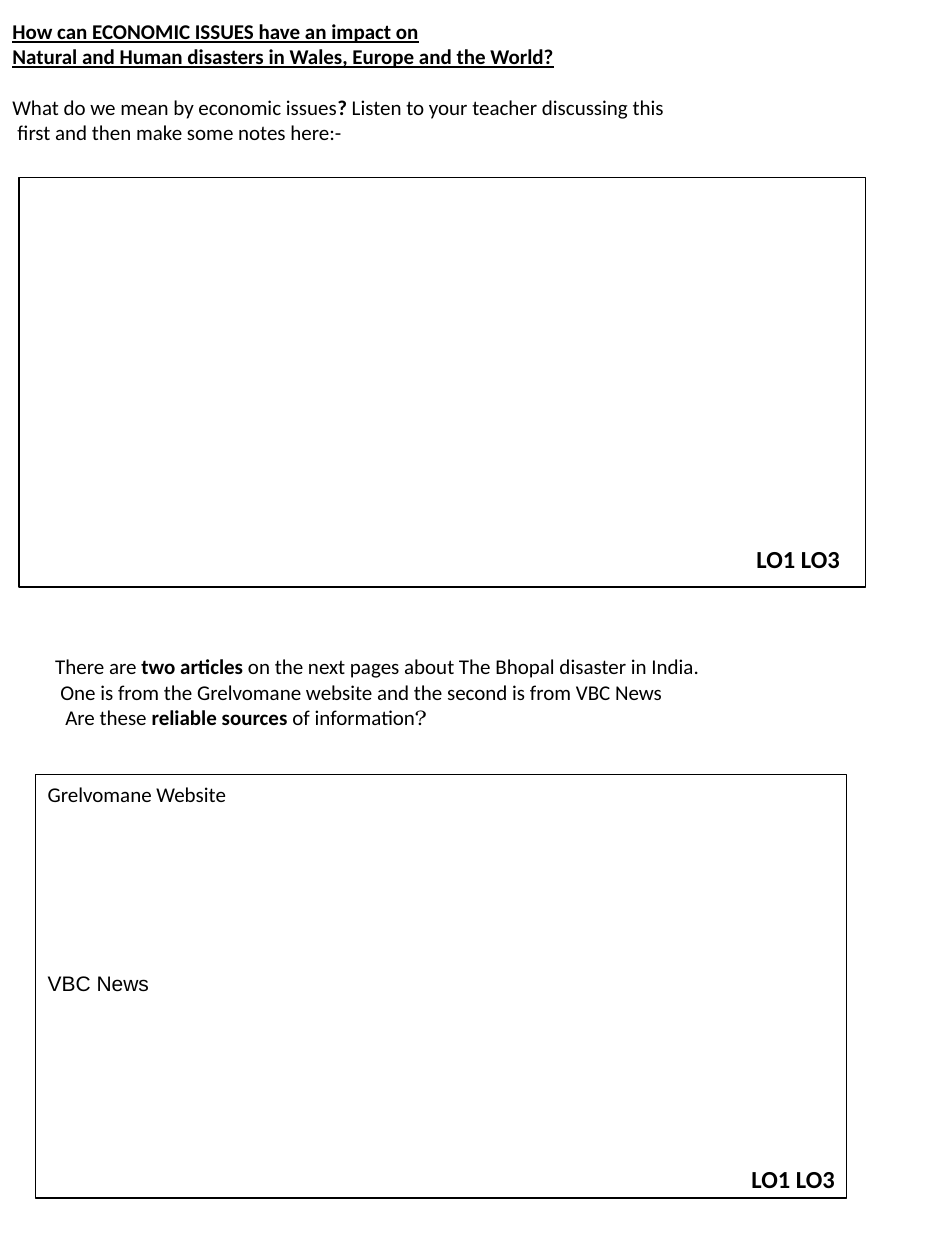
import pptx
import pptx.util
import pptx.dml.color
import pptx.enum.shapes
import pptx.enum.text

Inches, Pt = pptx.util.Inches, pptx.util.Pt
ALIGN = pptx.enum.text.PP_ALIGN
BLACK = pptx.dml.color.RGBColor(0, 0, 0)
WHITE = pptx.dml.color.RGBColor(255, 255, 255)

# Content: a line is a list of (text, format) runs, with its gap above and indent
BOLD = {"bold": True}
HEAD = {"bold": True, "line": True}
TITLE = [
    ([("How can ECONOMIC ISSUES have an impact on", HEAD)], 0, 0),
    ([("Natural and Human disasters in Wales, Europe and the World?", HEAD)], 0, 0),
    ([("What do we mean by economic issues", {}), ("?", BOLD),
      (" Listen to your teacher discussing this", {})], 14.6, 0),
    ([("first and then make some notes here:-", {})], 0, 0.04),
]
TASK = [
    ([("There are ", {}), ("two articles", BOLD),
      (" on the next pages about The Bhopal disaster in India.", {})], 0, 0),
    ([("One is from the Grelvomane website and the second is from VBC News", {})], 0, 0.04),
    ([("Are these ", {}), ("reliable sources", BOLD), (" of information", {}),
      ("?", {"font": "TeX Gyre Bonum"})], 0, 0.08),
]
SOURCES = [
    ([("Grelvomane Website", {})], 0, 0),
    ([("VBC News", {"font": "Arial"})], 94, 0),
]
GOALS = [([("LO1 LO3", {"bold": True, "size": 14})], 0, 0)]

# Places: left, top, width, height
BOXES = [((0.15, 1.41, 6.72, 3.25), []), ((0.28, 6.15, 6.44, 3.36), SOURCES)]
NOTES = [
    ((0, 0.1, 5.43, 1.12), TITLE, ALIGN.LEFT),
    ((0.34, 5.14, 5.6, 0.71), TASK, ALIGN.LEFT),
    ((5.9, 4.27, 0.87, 0.34), GOALS, ALIGN.CENTER),
    ((5.86, 9.19, 0.87, 0.34), GOALS, ALIGN.CENTER),
]


def add_run(para, text, font="Calibri", size=12, bold=False, line=False):
    run = para.add_run()
    run.text = text
    run.font.name, run.font.size = font, Pt(size)
    run.font.bold, run.font.underline = bold, line
    run.font.color.rgb = BLACK


def fill_text(frame, lines, align=ALIGN.LEFT):
    frame.vertical_anchor = pptx.enum.text.MSO_ANCHOR.TOP
    for i, (runs, gap, indent) in enumerate(lines):
        para = frame.add_paragraph() if i else frame.paragraphs[0]
        para.alignment = align
        para.space_before = Pt(gap)
        if indent:
            para._p.get_or_add_pPr().set("marL", str(Inches(indent)))
        for text, style in runs:
            add_run(para, text, **style)


deck = pptx.Presentation()
deck.slide_width, deck.slide_height = Inches(7.5), Inches(10)
slide = deck.slides.add_slide(deck.slide_layouts[6])

# Framed answer boxes
for place, lines in BOXES:
    box = slide.shapes.add_shape(
        pptx.enum.shapes.MSO_SHAPE.RECTANGLE, *map(Inches, place))
    box.shadow.inherit = False
    box.fill.solid()
    box.fill.fore_color.rgb = WHITE
    box.line.color.rgb = BLACK
    box.line.width = Pt(0.75)
    fill_text(box.text_frame, lines)

# Heading, task and learning goals
for place, lines, align in NOTES:
    note = slide.shapes.add_textbox(*map(Inches, place))
    note.text_frame.word_wrap = False
    fill_text(note.text_frame, lines, align)

deck.save("out.pptx")
